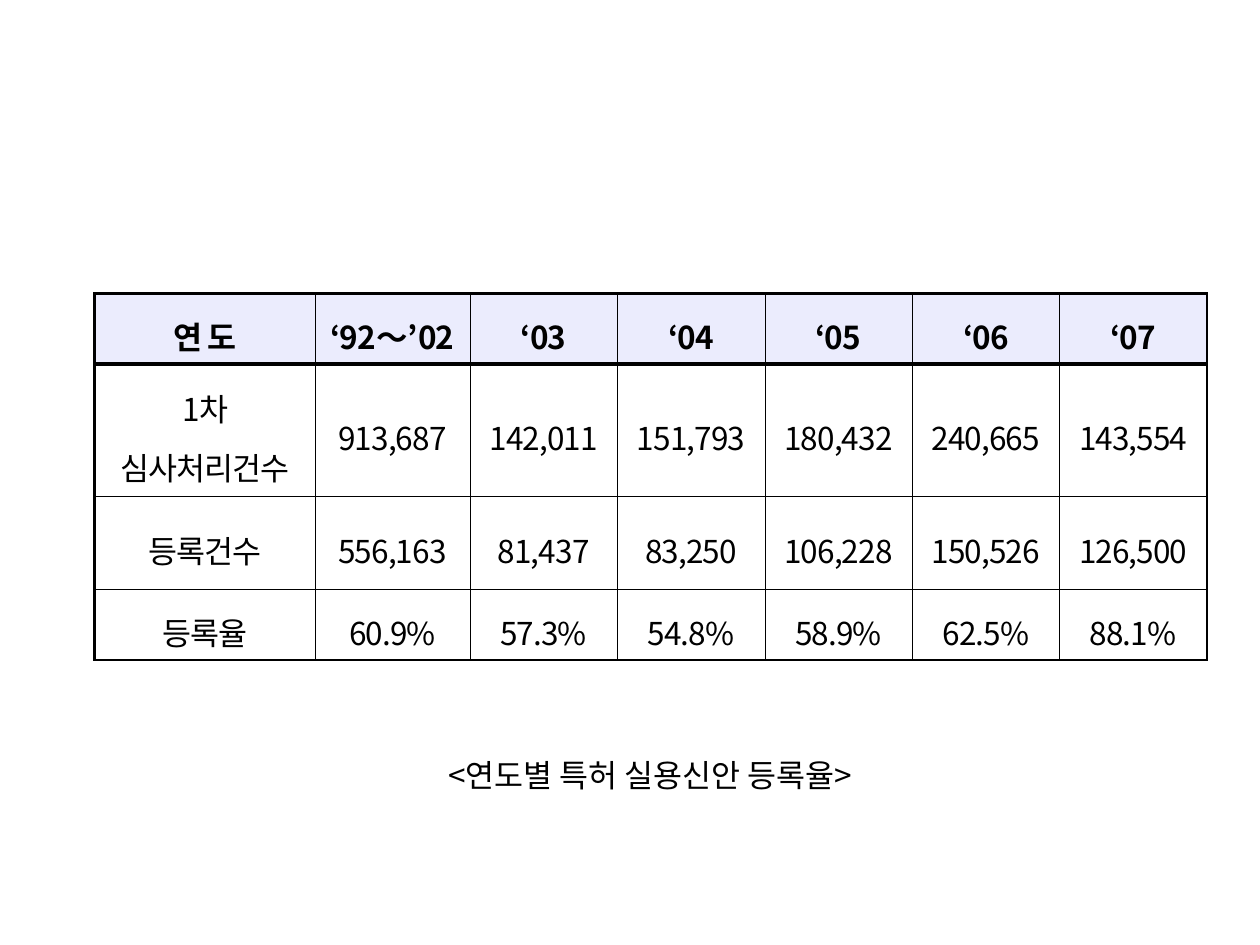
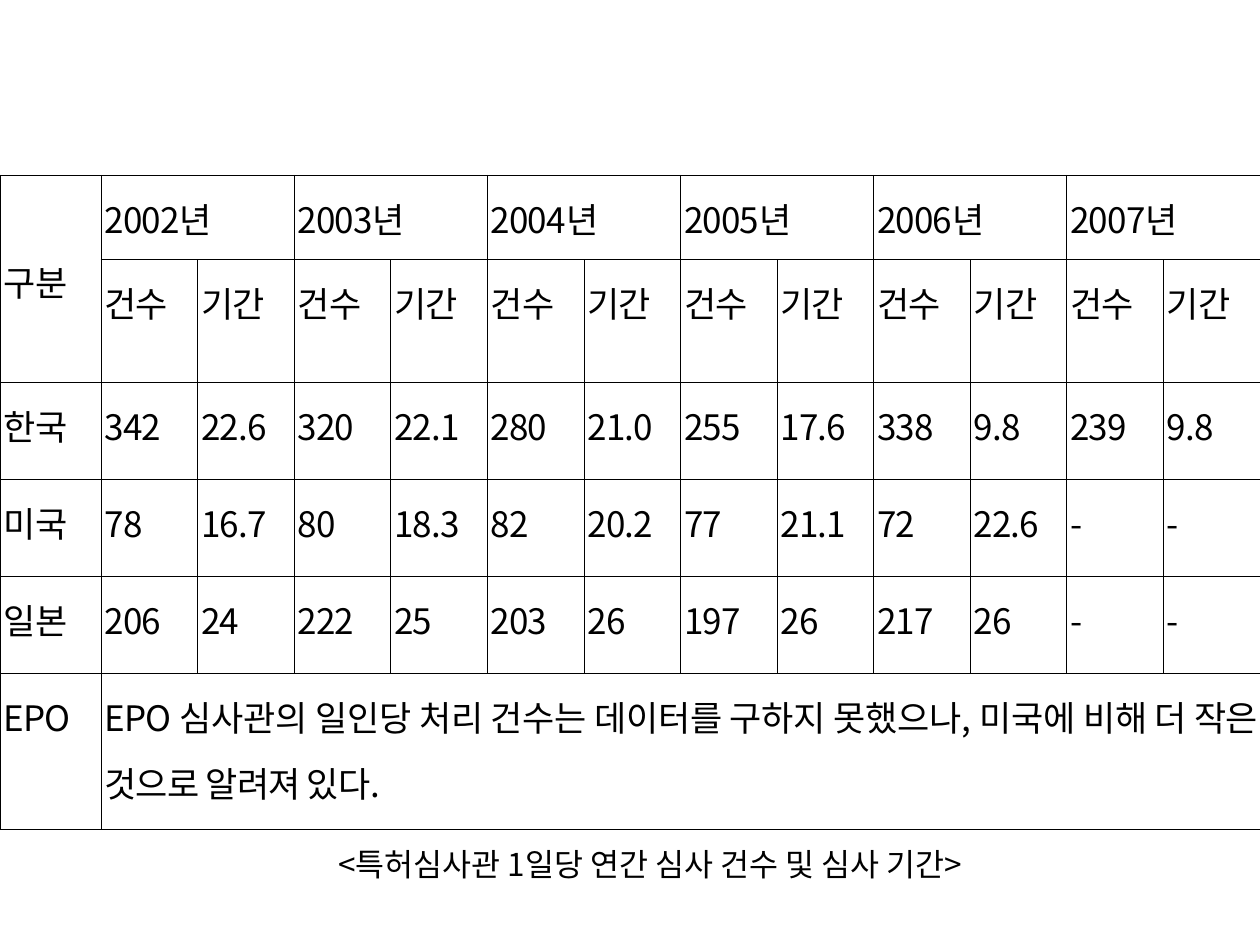
from lxml import etree
from pptx import Presentation
from pptx.dml.color import RGBColor
from pptx.enum.text import MSO_ANCHOR, MSO_AUTO_SIZE, PP_ALIGN
from pptx.oxml.ns import qn
from pptx.util import Inches, Pt

CENTER, JUSTIFY = PP_ALIGN.CENTER, PP_ALIGN.JUSTIFY
TOP, MIDDLE = MSO_ANCHOR.TOP, MSO_ANCHOR.MIDDLE
FIT_SHAPE = MSO_AUTO_SIZE.SHAPE_TO_FIT_TEXT

BLACK = "000000"
HEADER_FILL = "EBECFD"
BODY_FONT = "Noto Sans CJK KR"
LABEL_FONT = "Calibri"


def color(hex_code):
    return RGBColor.from_string(hex_code)


class Deck:
    cell_inset = 0.02
    line_spacing = 1.3
    caption_size = 18

    def __init__(self):
        self.prs = Presentation()
        self.prs.slide_width = Inches(10)
        self.prs.slide_height = Inches(7.5)
        self.slide = None

    def new_slide(self):
        self.slide = self.prs.slides.add_slide(self.prs.slide_layouts[6])

    def run(self, paragraph, text, size, font=BODY_FONT, bold=False, tracking=None):
        run = paragraph.add_run()
        run.text = text
        run.font.size = Pt(size)
        run.font.name = font
        run.font.bold = bold
        run.font.color.rgb = color(BLACK)
        props = run.font._element
        etree.SubElement(props, qn("a:ea"), typeface=BODY_FONT)
        if tracking is not None:
            props.set("spc", str(int(tracking * 100)))

    def caption(self, text, top):
        box = self.slide.shapes.add_textbox(
            Inches(0.91), Inches(top), Inches(8.5), Inches(0.4))
        frame = box.text_frame
        frame.word_wrap = True
        frame.auto_size = FIT_SHAPE
        paragraph = frame.paragraphs[0]
        paragraph.alignment = CENTER
        self.run(paragraph, text, self.caption_size)

    def table(self, left, top, widths, heights):
        frame = self.slide.shapes.add_table(
            len(heights), len(widths), Inches(left), Inches(top),
            Inches(sum(widths)), Inches(sum(heights)))
        table = frame.table
        table.first_row = table.horz_banding = False
        for column, width in zip(table.columns, widths):
            column.width = Inches(width)
        for row, height in zip(table.rows, heights):
            row.height = Inches(height)
        return table

    def rule_cells(self, table, inner, outer, under_header):
        last_row, last_col = len(table.rows), len(table.columns)
        across = {0: outer, 1: under_header, last_row: outer}
        down = {0: outer, last_col: outer}
        for r in range(last_row):
            for c in range(last_col):
                cell = table.cell(r, c)
                props = cell._tc.get_or_add_tcPr()
                edges = (("L", down.get(c, inner)), ("R", down.get(c + 1, inner)),
                         ("T", across.get(r, inner)), ("B", across.get(r + 1, inner)))
                for side, width in edges:
                    line = etree.SubElement(props, qn(f"a:ln{side}"), w=str(int(Pt(width))))
                    fill = etree.SubElement(line, qn("a:solidFill"))
                    etree.SubElement(fill, qn("a:srgbClr"), val=BLACK)
                cell.fill.background()

    def cell(self, cell, runs, size, align, anchor, bold=False, indent=0, top_inset=None):
        cell.margin_left = cell.margin_right = cell.margin_bottom = Inches(self.cell_inset)
        cell.margin_top = Inches(top_inset or self.cell_inset)
        cell.vertical_anchor = anchor
        paragraph = cell.text_frame.paragraphs[0]
        paragraph.alignment = align
        paragraph.line_spacing = self.line_spacing
        if indent:
            props = paragraph._p.get_or_add_pPr()
            props.set("marL", str(int(Inches(indent))))
            props.set("indent", "0")
        for text, font in runs:
            self.run(paragraph, text, size, font, bold, tracking=-0.5)


def registration_rates(deck):
    deck.new_slide()
    header = [[("연 도", LABEL_FONT)],
              [("‘92", BODY_FONT), ("～", LABEL_FONT), ("’02", BODY_FONT)]]
    header += [[(f"‘{year:02}", BODY_FONT)] for year in range(3, 8)]
    measures = [
        ([("1", BODY_FONT), ("차 심사처리건수", LABEL_FONT)],
         "913,687 142,011 151,793 180,432 240,665 143,554"),
        ([("등록건수", LABEL_FONT)], "556,163 81,437 83,250 106,228 150,526 126,500"),
        ([("등록율", LABEL_FONT)], "60.9% 57.3% 54.8% 58.9% 62.5% 88.1%"),
    ]
    rows = [header] + [[label] + [[(value, BODY_FONT)] for value in values.split()]
                       for label, values in measures]
    table = deck.table(0.75, 2.33, [1.75, 1.23] + [1.17] * 5, [0.56, 1.05, 0.74, 0.56])
    deck.rule_cells(table, inner=0.28, outer=1.41, under_header=2.55)
    for r, row in enumerate(rows):
        for c, runs in enumerate(row):
            cell = table.cell(r, c)
            deck.cell(cell, runs, 18, CENTER, MIDDLE, bold=r == 0)
            if r == 0:
                cell.fill.solid()
                cell.fill.fore_color.rgb = color(HEADER_FILL)
    deck.caption("<연도별 특허 실용신안 등록율>", 5.95)


def examiner_workload(deck):
    deck.new_slide()
    years = range(2002, 2008)
    countries = [
        "한국 342 22.6 320 22.1 280 21.0 255 17.6 338 9.8 239 9.8",
        "미국 78 16.7 80 18.3 82 20.2 77 21.1 72 22.6 - -",
        "일본 206 24 222 25 203 26 197 26 217 26 - -",
    ]
    epo_note = ("EPO 심사관의 일인당 처리 건수는 데이터를 구하지 못했으나, "
                "미국에 비해 더 작은 것으로 알려져 있다.")
    value_columns = 2 * len(years)
    table = deck.table(0, 1.39, [0.8] + [9.2 / value_columns] * value_columns,
                       [0.67, 0.87, 0.77, 0.77, 0.77, 1.24])
    deck.rule_cells(table, inner=0.25, outer=0.25, under_header=0.25)

    def write(r, c, text, top_inset=None):
        deck.cell(table.cell(r, c), [(text, BODY_FONT)], 20, JUSTIFY, TOP,
                  indent=0.01, top_inset=top_inset)

    table.cell(0, 0).merge(table.cell(1, 0))
    write(0, 0, "구분", top_inset=0.52)
    for c, year in zip(range(1, value_columns, 2), years):
        table.cell(0, c).merge(table.cell(0, c + 1))
        write(0, c, f"{year}년")
        write(1, c, "건수")
        write(1, c + 1, "기간")
    for r, country in enumerate(countries, 2):
        for c, text in enumerate(country.split()):
            write(r, c, text)
    table.cell(5, 1).merge(table.cell(5, value_columns))
    write(5, 0, "EPO")
    write(5, 1, epo_note)
    deck.caption("<특허심사관 1일당 연간 심사 건수 및 심사 기간>", 6.66)


def main():
    deck = Deck()
    registration_rates(deck)
    examiner_workload(deck)
    deck.prs.save("out.pptx")


if __name__ == "__main__":
    main()
